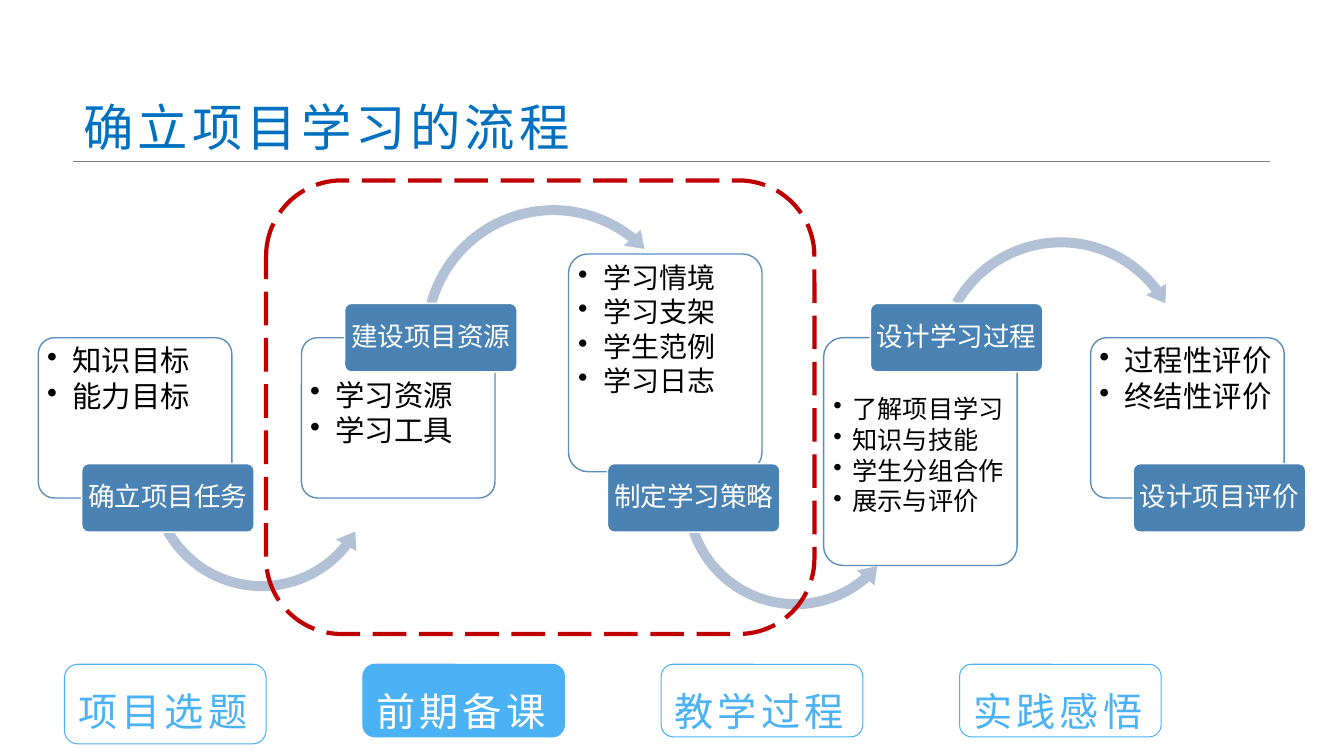
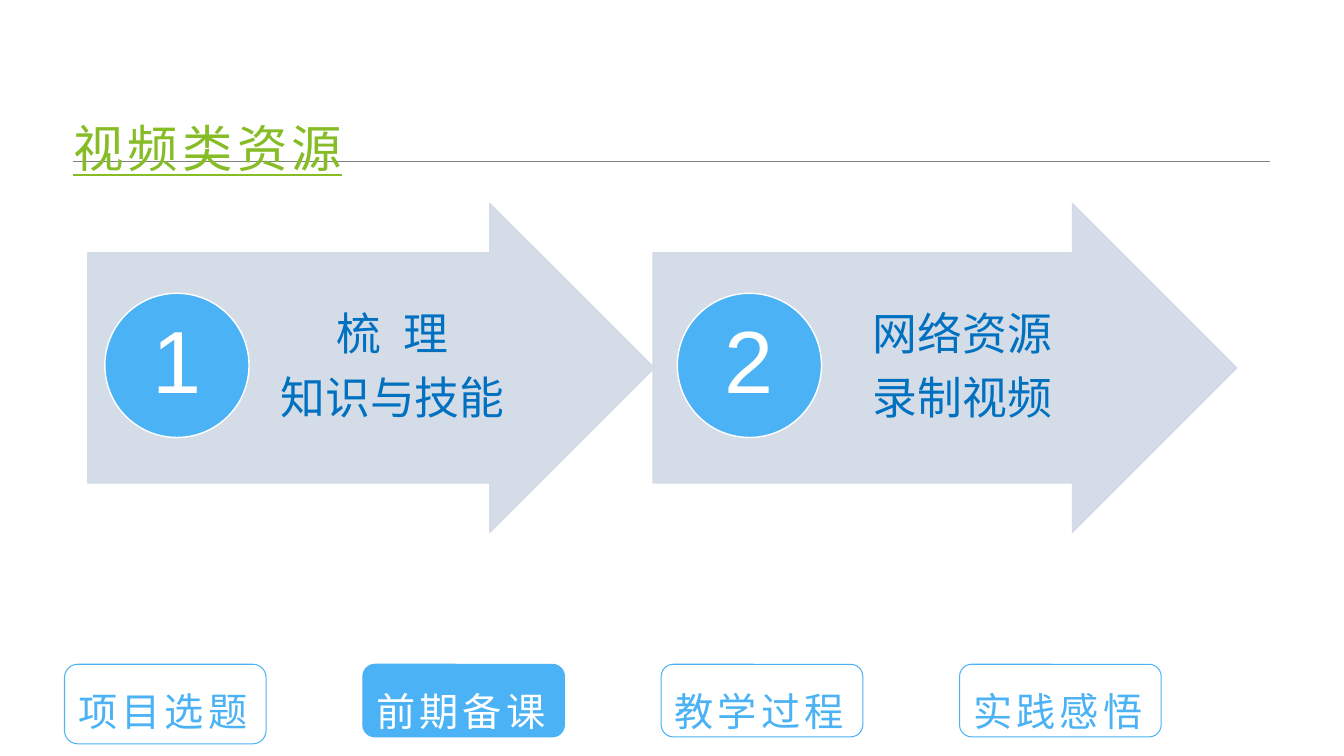
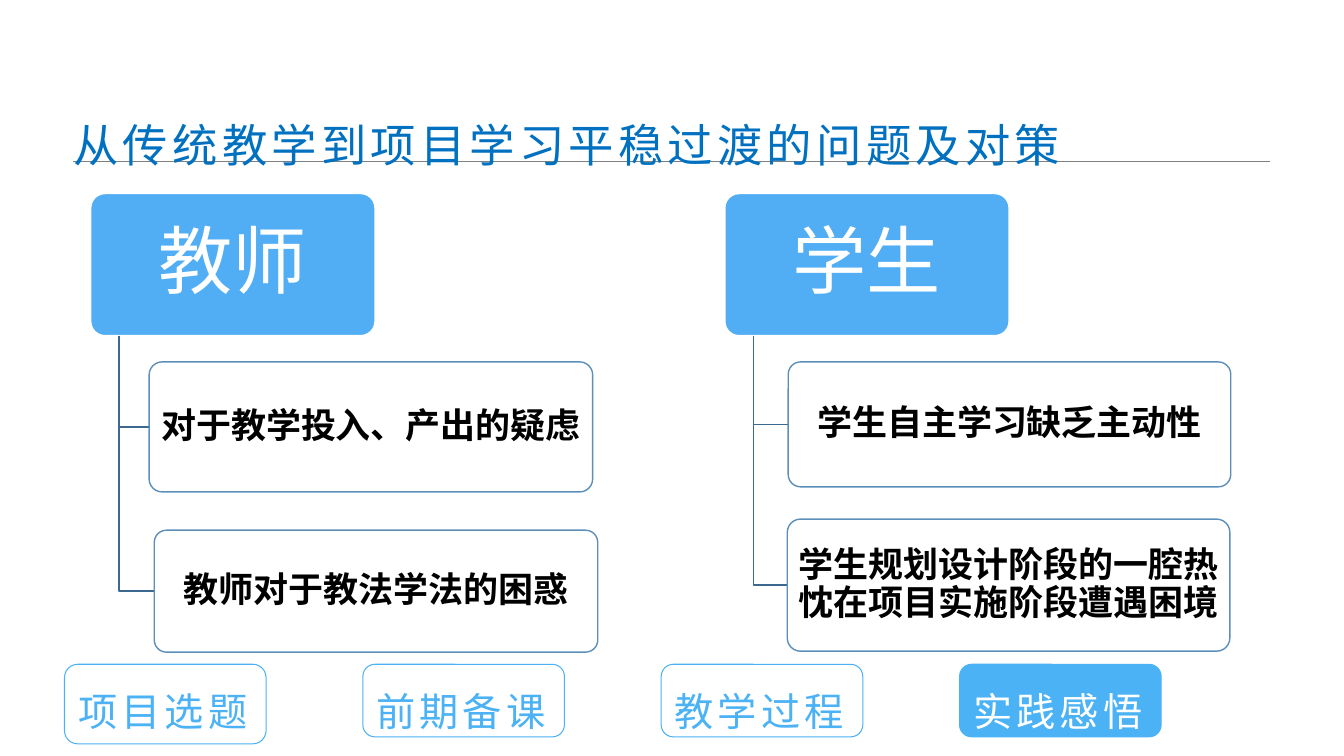
from lxml.etree import SubElement
from pptx import Presentation
from pptx.dml.color import RGBColor
from pptx.enum.dml import MSO_LINE
from pptx.enum.shapes import MSO_CONNECTOR, MSO_SHAPE
from pptx.enum.text import MSO_ANCHOR, MSO_AUTO_SIZE, PP_ALIGN
from pptx.oxml.ns import qn
from pptx.util import Inches, Pt

WIDE, HIGH = Inches(13.333), Inches(7.5)
FONT = "Arial"
HUES = {
    "white": "FFFFFF", "black": "000000", "gray": "808080", "title": "0070C0",
    "green": "86BC25", "sky": "4BB2F5", "head": "51AEF4", "steel": "4A83B3",
    "stem": "3B698F", "curve": "B2C1D6", "arrow": "D0D9E5", "red": "C00000",
}
STEPS = ["项目选题", "前期备课", "教学过程", "实践感悟"]


def hue(name):
    return RGBColor.from_string(HUES[name])


def px(share):
    return round(WIDE * share / 100)


def py(share):
    return round(HIGH * share / 100)


def area(x, y, w, h):
    return px(x), py(y), px(w), py(h)


def fade(fill, share):
    tint = fill._xPr.find(qn("a:solidFill"))[0]
    SubElement(tint, qn("a:alpha"), val=str(share * 1000))


def block(slide, kind, box, fill=None, line=None, width=1, adj=(), alpha=None):
    shape = slide.shapes.add_shape(kind, *area(*box))
    shape.shadow.inherit = False
    for i, value in enumerate(adj):
        shape.adjustments[i] = value
    for paint, name in ((shape.fill, fill), (shape.line.fill, line)):
        if name is None:
            paint.background()
        else:
            paint.solid()
            paint.fore_color.rgb = hue(name)
            if alpha:
                fade(paint, alpha)
    if line:
        shape.line.width = Pt(width)
    return shape


def card(slide, box, fill="white", line="steel", alpha=None):
    return block(slide, MSO_SHAPE.ROUNDED_RECTANGLE, box, fill, line, adj=[0.1], alpha=alpha)


def write(shape, lines, size, color, align=PP_ALIGN.CENTER, anchor=MSO_ANCHOR.MIDDLE,
          pad=(0.04, 0.04, 0.04, 0.04), lead=0.9, gap=0, dent=0, spc=0,
          bold=False, under=False):
    frame = shape.text_frame
    frame.word_wrap = True
    frame.vertical_anchor = anchor
    (frame.margin_left, frame.margin_top,
     frame.margin_right, frame.margin_bottom) = map(Inches, pad)
    frame.text = "\n".join(lines)
    for para in frame.paragraphs:
        para.alignment = align
        para.line_spacing = lead
        para.space_before = Pt(0)
        para.space_after = Pt(gap)
        props = para._p.get_or_add_pPr()
        if dent:
            props.set("marL", str(Inches(dent)))
            props.set("indent", str(-Inches(dent)))
            SubElement(props, qn("a:buChar"), char="•")
        font = para.font
        font.name, font.size, font.bold = FONT, Pt(size), bold
        font.color.rgb = hue(color)
        if under:
            font.underline = True
        if spc:
            track(para, spc)
    return frame


def track(para, points):
    para._p.get_or_add_pPr().get_or_add_defRPr().set("spc", str(round(points * 100)))


def base(deck, title, box, now, size=36, color="title", under=False):
    slide = deck.slides.add_slide(deck.slide_layouts[6])
    rule = slide.shapes.add_connector(
        MSO_CONNECTOR.STRAIGHT, px(5.45), py(21.35), px(94.5), py(21.35))
    rule.line.color.rgb = hue("gray")
    rule.line.width = Pt(0.25)
    SubElement(rule._element.spPr, qn("a:effectLst"))
    head = slide.shapes.add_textbox(*area(*box))
    write(head, [title], size, color, PP_ALIGN.LEFT, MSO_ANCHOR.BOTTOM,
          (0.1, 0.05, 0.1, 0.05), spc=3, under=under)
    for i, step in enumerate(STEPS):
        on = i == now
        tab = block(slide, MSO_SHAPE.ROUNDED_RECTANGLE,
                    (4.8 + 22.2 * i, 87.87, 15, 9.6 if i else 10.53),
                    "sky" if on else "white", "sky", 0.75)
        frame = write(tab, [step], 28, "white" if on else "sky", PP_ALIGN.LEFT,
                      MSO_ANCHOR.TOP, (0.1, 0.05, 0.1, 0.05), 1.3, spc=3)
        frame.word_wrap = False
        frame.auto_size = MSO_AUTO_SIZE.SHAPE_TO_FIT_TEXT
    return slide


def flow(deck):
    slide = base(deck, "确立项目学习的流程", (5.45, 6.53, 49.5, 14.93), 1)
    over, under = MSO_SHAPE.CIRCULAR_ARROW, MSO_SHAPE.LEFT_CIRCULAR_ARROW
    stages = [
        ("确立项目任务", ["知识目标", "能力目标"], 2.85, 44.67, 21.2, 21, 0.25, 0.04,
         (10.58, 47.47, 17.78), [0.042, 5.3, 23.055, 90.245, 0.049]),
        ("建设项目资源", ["学习资源", "学习工具"], 22.43, 44.67, 21.2, 21, 0.25, 0.38,
         (30.9, 26.27, 20.55), [0.036, 4.517, 185.126, 117.154, 0.042]),
        ("制定学习策略", ["学习情境", "学习支架", "学生范例", "学习日志"],
         42.3, 33.6, 28.8, 20, 0.25, 0.05,
         (50.33, 50, 17.7), [0.042, 5.326, 29.442, 96.607, 0.049]),
        ("设计学习过程", ["了解项目学习", "知识与技能", "学生分组合作", "展示与评价"],
         61.28, 44.67, 30.13, 18, 0.19, 0.53,
         (69.15, 30.53, 19.58), [0.038, 4.756, 193.529, 125.795, 0.044]),
        ("设计项目评价", ["过程性评价", "终结性评价"], 81.15, 44.67, 21.2, 21, 0.25, 0.04,
         None, None),
    ]
    for i, (name, items, x, y, h, size, dent, top, ring, adj) in enumerate(stages):
        high = i % 2
        note = card(slide, (x, y, 14.4, h), alpha=90)
        write(note, items, size, "black", PP_ALIGN.LEFT, MSO_ANCHOR.TOP,
              (0.04, top, 0.04, 0.04), gap=size * 0.14, dent=dent)
        if ring:
            left, peak, side = ring
            block(slide, over if high else under,
                  (left, peak, side, side * WIDE / HIGH), "curve", adj=adj)
        label = card(slide, (6.08 + 19.56 * i, 40.13 if high else 61.33, 12.83, 9.07),
                     "steel", "white")
        write(label, [name], 19, "white", pad=(0.02, 0.03, 0.02, 0.03))
    frame = block(slide, MSO_SHAPE.ROUNDED_RECTANGLE, (19.8, 23.87, 40.8, 60),
                  line="red", width=3)
    frame.line.dash_style = MSO_LINE.LONG_DASH


def video(deck):
    slide = base(deck, "视频类资源", (4.73, 9.33, 59.93, 14.93), 1,
                 color="green", under=True)
    parts = [
        (["梳 理", "知识与技能"], 6.53, 42.15, 7.8, 17.55, 23.03),
        (["网络资源", "录制视频"], 48.6, 43.43, 50.4, 59.48, 24),
    ]
    for i, (lines, x, w, dot, left, room) in enumerate(parts):
        block(slide, MSO_SHAPE.RIGHT_ARROW, (x, 26.93, w, 43.47), "arrow", "arrow",
              adj=[0.7, 0.5], alpha=90)
        note = slide.shapes.add_textbox(*area(left, 33.47, room, 30.4))
        frame = write(note, lines, 32, "title", pad=(0.09, 0.02, 0.05, 0.02), gap=10.5)
        if i == 0:
            track(frame.paragraphs[0], 4.4)
        disc = block(slide, MSO_SHAPE.OVAL, (dot, 38.8, 10.73, 10.73 * WIDE / HIGH),
                     "sky", "white")
        write(disc, [str(i + 1)], 63, "white")


def elbow(slide, x, top, end, low):
    pen = slide.shapes.build_freeform(px(x), py(top))
    pen.add_line_segments([(px(x), py(low)), (px(end), py(low))], close=False)
    stem = pen.convert_to_shape()
    stem.shadow.inherit = False
    stem.fill.background()
    stem.line.color.rgb = hue("stem")
    stem.line.width = Pt(1)


def issues(deck):
    slide = base(deck, "从传统教学到项目学习平稳过渡的问题及对策",
                 (4.73, 8.53, 76.95, 14.93), 3, 32.4)
    groups = [
        ("教师", 6.75, [
            ("对于教学投入、产出的疑虑", (11.1, 47.87, 33, 17.2)),
            ("教师对于教法学法的困惑", (11.48, 70.13, 33, 16.13))]),
        ("学生", 53.93, [
            ("学生自主学习缺乏主动性", (58.65, 47.87, 32.93, 16.53)),
            ("学生规划设计阶段的一腔热忱在项目实施阶段遭遇困境",
             (58.58, 68.67, 32.93, 17.47))]),
    ]
    for name, x, notes in groups:
        head = card(slide, (x, 25.6, 21.15, 18.8), "head", "white")
        write(head, [name], 53, "white", pad=(0.11, 0.07, 0.11, 0.07))
        for text, box in notes:
            left, top, _, h = box
            elbow(slide, x + 2.12, 44.4, left, top + h / 2)
            note = card(slide, box, alpha=90)
            write(note, [text], 25, "black", pad=(0.05, 0.03, 0.05, 0.03), bold=True)


def main():
    deck = Presentation()
    deck.slide_width, deck.slide_height = WIDE, HIGH
    flow(deck)
    video(deck)
    issues(deck)
    deck.save("out.pptx")


if __name__ == "__main__":
    main()
